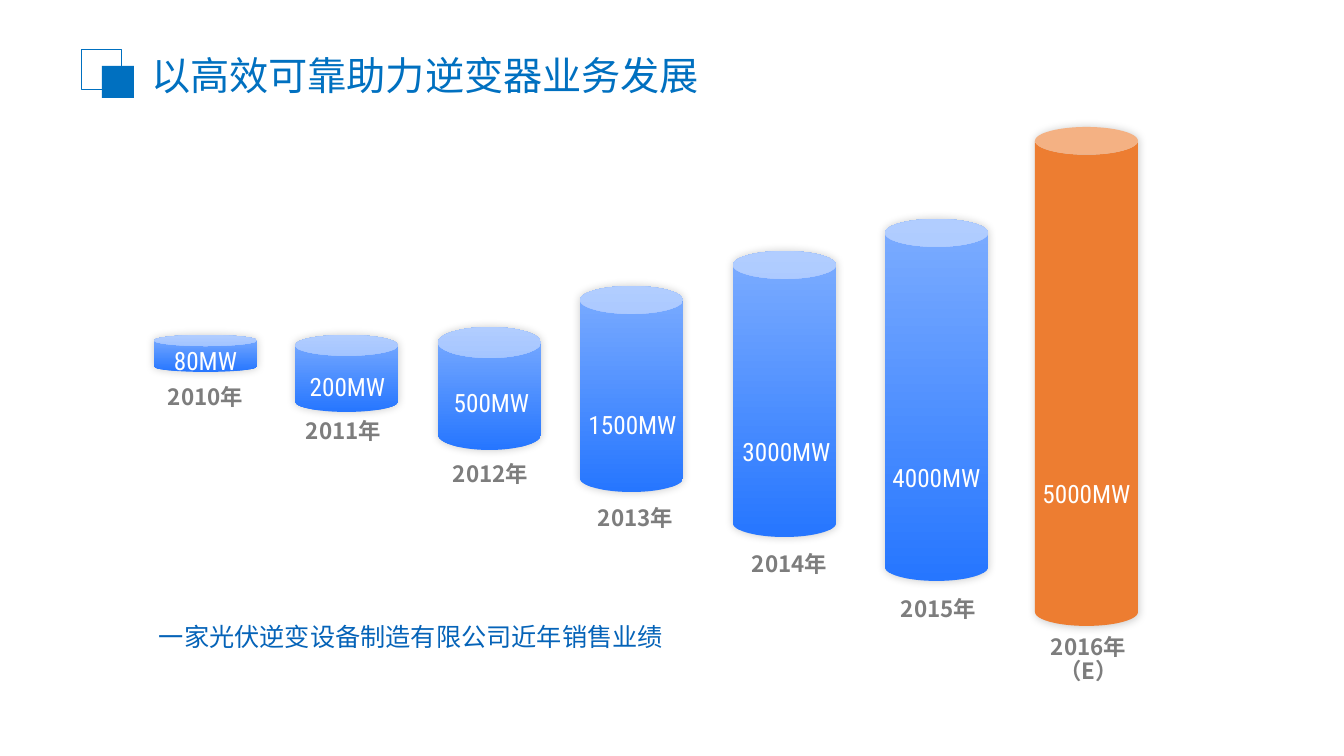
from dataclasses import dataclass

from lxml.etree import SubElement as Sub
from pptx import Presentation
from pptx.dml.color import RGBColor as Rgb
from pptx.enum.shapes import MSO_SHAPE as Shape
from pptx.enum.text import MSO_ANCHOR as Anchor, PP_ALIGN as Align
from pptx.oxml.ns import qn
from pptx.util import Pt

WIDE, HIGH = 1344, 756
SCALE = 12192000 / WIDE


@dataclass(frozen=True)
class Theme:
    blue: str = "0070C0"
    link: str = "0563B8"
    deep: str = "2676FF"
    pale: str = "7DADFF"
    warm: str = "ED7D31"
    gray: str = "7D7D7D"
    white: str = "FFFFFF"
    dark: str = "000000"
    han: str = "Noto Sans CJK SC"
    thin: str = "Roboto Condensed"
    head: int = 28
    value: int = 18
    year: int = 16


LOOK = Theme()

BARS = [
    ("80MW", "2010年", (154, 335, 103, 37), 0.3, (0, 340), (0, 381)),
    ("200MW", "2011年", (295, 335, 103, 77), 0.27, (1, 366), (-3, 415)),
    ("500MW", "2012年", (438, 327, 103, 123), 0.3, (2, 382), (1, 458)),
    ("1500MW", "2013年", (580, 286, 103, 206), 0.27, (1, 404), (4, 502)),
    ("3000MW", "2014年", (733, 251, 103, 286), 0.27, (2, 431), (5, 548)),
    ("4000MW", "2015年", (885, 219, 103, 362), 0.27, (0, 457), (2, 593)),
    ("5000MW", "2016年（E）", (1035, 127, 103, 499), 0.27, (0, 473), (2, 631)),
]


def emu(box):
    return [round(n * SCALE) for n in box]


def put(thing, form):
    for key, val in form.items():
        setattr(thing, key, val)


def write(shape, text, size, color, face, align=Align.LEFT, bold=False, lead=1.0):
    frame = shape.text_frame
    put(frame, {"word_wrap": True, "vertical_anchor": Anchor.TOP})
    frame.text = text
    par = frame.paragraphs[0]
    put(par, {"alignment": align, "line_spacing": lead})
    run = par.runs[0]
    put(run.font, {"size": Pt(size), "name": face, "bold": bold})
    run.font.color.rgb = Rgb.from_string(color)
    Sub(run.font._element, qn("a:ea"), typeface=face)


def label(shapes, box, *args, **form):
    write(shapes.add_textbox(*emu(box)), *args, **form)


def block(shapes, kind, box):
    shape = shapes.add_shape(kind, *emu(box))
    shape.shadow.inherit = False
    return shape


def glow(shape):
    effect = shape._element.spPr.find(qn("a:effectLst"))
    shade = Sub(effect, qn("a:outerShdw"), blurRad=str(Pt(6)), dist="0",
                dir="18900000", algn="ctr", rotWithShape="0")
    tint = Sub(shade, qn("a:srgbClr"), val=LOOK.dark)
    Sub(tint, qn("a:alpha"), val="20000")


def header(slide, box):
    left, top, wide, high = box
    frame = block(slide.shapes, Shape.RECTANGLE, (left, top, 40, 40))
    frame.fill.background()
    frame.line.color.rgb = Rgb.from_string(LOOK.blue)
    frame.line.width = Pt(0.75)
    square = block(slide.shapes, Shape.RECTANGLE, (left + 20, top + 16, 32, 32))
    square.fill.solid()
    square.fill.fore_color.rgb = Rgb.from_string(LOOK.blue)
    square.line.fill.background()
    title = slide.shapes.title
    place = emu((left + 59, top - 4, wide - 59, high))
    put(title, dict(zip(("left", "top", "width", "height"), place)))
    write(title, "以高效可靠助力逆变器业务发展", LOOK.head, LOOK.blue, LOOK.han)


def column(slide, box, value, year, rim, spot, foot, last):
    left, top, wide, high = box
    mid = left + wide / 2
    shapes = slide.shapes.add_group_shape().shapes
    can = block(shapes, Shape.CAN, box)
    can.adjustments[0] = rim
    can.line.fill.background()
    if last:
        can.fill.solid()
        can.fill.fore_color.rgb = Rgb.from_string(LOOK.warm)
    else:
        can.fill.gradient()
        can.fill.gradient_angle = 90
        for stop, color in zip(can.fill.gradient_stops, (LOOK.deep, LOOK.pale)):
            stop.color.rgb = Rgb.from_string(color)
    glow(can)
    shift, line = spot
    label(shapes, (mid + shift - 60, line, 120, 40), value, LOOK.value,
          LOOK.white, LOOK.thin, align=Align.CENTER)
    shift, line = foot
    span, deep = (145, 59) if last else (110, 34)
    label(shapes, (mid + shift - span / 2, line, span, deep), year, LOOK.year,
          LOOK.gray, LOOK.han, align=Align.CENTER, bold=True, lead=0.9)


def chart(slide):
    for value, year, box, rim, spot, foot in BARS:
        column(slide, box, value, year, rim, spot, foot, value == BARS[-1][0])


def note(slide, box):
    label(slide.shapes, box, "一家光伏逆变设备制造有限公司近年销售业绩",
          LOOK.value, LOOK.link, LOOK.han)


def main():
    deck = Presentation()
    deck.slide_width, deck.slide_height = emu((WIDE, HIGH))
    slide = deck.slides.add_slide(deck.slide_layouts[5])
    header(slide, (82, 50, 862, 57))
    chart(slide)
    note(slide, (149, 616, 533, 40))
    deck.save("out.pptx")


if __name__ == "__main__":
    main()
